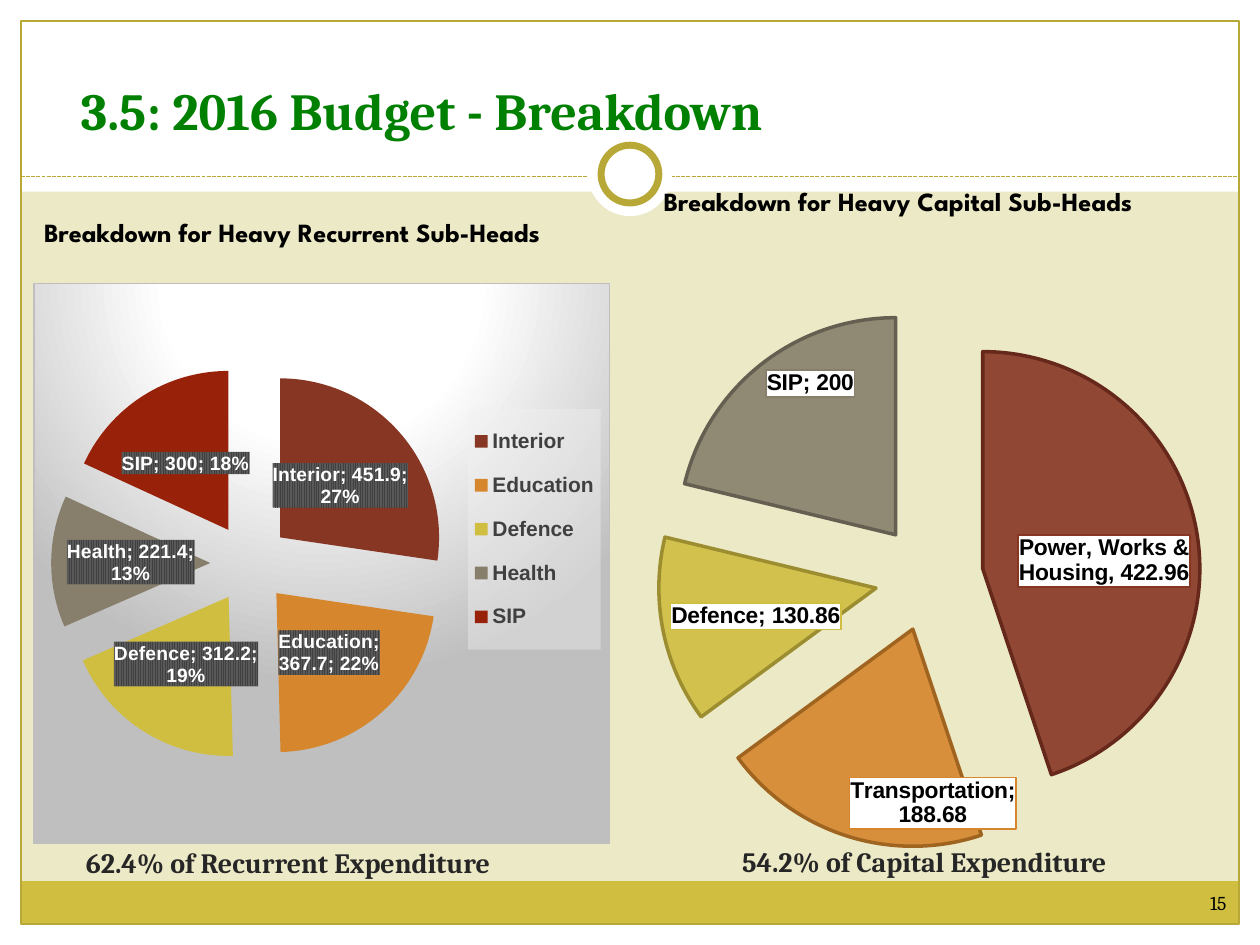
from lxml import etree
from pptx import Presentation
from pptx.chart.data import CategoryChartData
from pptx.dml.color import RGBColor
from pptx.enum.chart import XL_CHART_TYPE, XL_LABEL_POSITION, XL_LEGEND_POSITION
from pptx.enum.dml import MSO_LINE
from pptx.enum.shapes import MSO_CONNECTOR, MSO_SHAPE
from pptx.enum.text import MSO_ANCHOR, MSO_AUTO_SIZE, PP_ALIGN
from pptx.oxml import parse_xml
from pptx.oxml.ns import qn
from pptx.util import Pt

WHITE = RGBColor(0xFF, 0xFF, 0xFF)
BLACK = RGBColor(0, 0, 0)
CREAM = RGBColor(0xEC, 0xE9, 0xC6)
GOLD = RGBColor(0xB8, 0xA8, 0x38)
GREEN = RGBColor(0, 0x80, 0)
CHARCOAL = RGBColor(0x26, 0x26, 0x26)
GREY = RGBColor(0x40, 0x40, 0x40)
BROWN = RGBColor(0x87, 0x36, 0x24)
ORANGE = RGBColor(0xD6, 0x86, 0x2D)
YELLOW = RGBColor(0xD0, 0xBE, 0x40)
TAUPE = RGBColor(0x87, 0x7F, 0x6C)
RED = RGBColor(0x97, 0x21, 0x09)

RECURRENT = [("Interior", 451.9, BROWN), ("Education", 367.7, ORANGE),
             ("Defence", 312.2, YELLOW), ("Health", 221.4, TAUPE), ("SIP", 300, RED)]
CAPITAL = [("Power, Works & Housing", 422.96, BROWN), ("Transportation", 188.68, ORANGE),
           ("Defence", 130.86, YELLOW), ("SIP", 200, TAUPE)]


def solid(color, alpha=100):
    return f'<a:solidFill><a:srgbClr val="{color}"><a:alpha val="{alpha * 1000}"/></a:srgbClr></a:solidFill>'


def chart_properties(content):
    return parse_xml('<c:spPr xmlns:c="http://schemas.openxmlformats.org/drawingml/2006/chart" '
                     'xmlns:a="http://schemas.openxmlformats.org/drawingml/2006/main">'
                     f'{content}</c:spPr>')


def add_panel(slide, kind, box, fill=None, line=None, width=0.75):
    shape = slide.shapes.add_shape(kind, *map(Pt, box))
    shape.shadow.inherit = False
    if fill is None:
        shape.fill.background()
    else:
        shape.fill.solid()
        shape.fill.fore_color.rgb = fill
    if line is None:
        shape.line.fill.background()
    else:
        shape.line.color.rgb = line
        shape.line.width = Pt(width)


def add_divider(slide, left, right, top):
    line = slide.shapes.add_connector(MSO_CONNECTOR.STRAIGHT, Pt(left), Pt(top), Pt(right), Pt(top))
    line.line.color.rgb = GOLD
    line.line.width = Pt(0.75)
    line.line.dash_style = MSO_LINE.SQUARE_DOT
    etree.SubElement(line._element.spPr, qn("a:effectLst"))


def write_text(shape, box, text, font_name, size, color, bold=True,
               anchor=MSO_ANCHOR.TOP, before=0, spacing=1.0, align=PP_ALIGN.LEFT):
    shape.left, shape.top, shape.width, shape.height = map(Pt, box)
    frame = shape.text_frame
    frame.text = text
    frame.word_wrap = True
    frame.auto_size = MSO_AUTO_SIZE.NONE
    frame.vertical_anchor = anchor
    paragraph = frame.paragraphs[0]
    paragraph.alignment = align
    paragraph.space_before = Pt(before)
    paragraph.line_spacing = spacing
    style_font(paragraph.runs[0].font, font_name, size, color, bold)


def fill_placeholder(slide, placeholder, *args, **options):
    write_text(placeholder, *args, **options)
    # Bring the text in front of the frame
    slide.shapes._spTree.append(placeholder._element)


def add_text(slide, box, *args, **options):
    write_text(slide.shapes.add_textbox(*map(Pt, box)), box, *args, **options)


def style_font(font, name, size, color, bold=True):
    font.name, font.size, font.bold = name, Pt(size), bold
    font.color.rgb = color


def add_pie(slide, box, rows, position, label_size, label_color, percent):
    data = CategoryChartData()
    data.categories = [name for name, _, _ in rows]
    data.add_series("Series 1", [value for _, value, _ in rows])
    chart = slide.shapes.add_chart(XL_CHART_TYPE.PIE, *map(Pt, box), data).chart
    chart.has_title = False
    chart.has_legend = False
    style_font(chart.font, "Cambria", 10, BLACK, False)
    plot = chart.plots[0]
    plot.vary_by_categories = True
    series = plot.series[0]
    for index, (_, _, color) in enumerate(rows):
        fill = series.points[index].format.fill
        fill.solid()
        fill.fore_color.rgb = color
    # Pull all slices apart
    explosion = etree.Element(qn("c:explosion"), val="25")
    series._element.find(qn("c:dPt")).addprevious(explosion)
    labels = series.data_labels
    labels.show_value = labels.show_category_name = True
    labels.show_percentage = percent
    labels.position = position
    style_font(labels.font, "Arial", label_size, label_color)
    add_separator(labels._element)
    return chart


def add_separator(element):
    separator = etree.Element(qn("c:separator"))
    separator.text = "; "
    element.find(qn("c:showBubbleSize")).addnext(separator)


def style_recurrent(chart):
    # Dark striped labels
    labels = chart.plots[0].series[0].data_labels._element
    labels.find(qn("c:txPr")).addprevious(chart_properties(
        '<a:pattFill prst="narVert"><a:fgClr><a:srgbClr val="404040"/></a:fgClr>'
        '<a:bgClr><a:srgbClr val="595959"/></a:bgClr></a:pattFill>'))
    # Radial background
    stops = "".join(f'<a:gs pos="{place * 1000}"><a:srgbClr val="{color}"/></a:gs>'
                    for place, color in [(0, "FFFFFF"), (39, "FFFFFF"), (100, "BFBFBF")])
    chart._chartSpace.find(qn("c:txPr")).addprevious(chart_properties(
        f'<a:gradFill><a:gsLst>{stops}</a:gsLst><a:path path="circle">'
        '<a:fillToRect l="50000" t="-80000" r="50000" b="180000"/></a:path></a:gradFill>'
        f'<a:ln w="9525">{solid("BFBFBF")}</a:ln>'))
    # Translucent legend
    chart.has_legend = True
    legend = chart.legend
    legend.position = XL_LEGEND_POSITION.RIGHT
    legend.include_in_layout = False
    style_font(legend.font, "Arial", 12, GREY)
    element = legend._element
    element.find(qn("c:txPr")).addprevious(chart_properties(solid("F2F2F2", 39)))
    layout = element.find(qn("c:layout"))
    if layout is None:
        layout = etree.Element(qn("c:layout"))
        element.find(qn("c:legendPos")).addnext(layout)
    manual = etree.SubElement(layout, qn("c:manualLayout"))
    for tag, value in [("xMode", "edge"), ("yMode", "edge"), ("x", "0.755"),
                       ("y", "0.224"), ("w", "0.23"), ("h", "0.43")]:
        etree.SubElement(manual, qn(f"c:{tag}"), val=value)


def style_capital(chart, rows):
    series = chart.plots[0].series[0]
    for index, (name, value, color) in enumerate(rows):
        # Translucent slice with a darker edge
        point = series.points[index]
        shade = RGBColor(*(int(part * 0.75) for part in color))
        point.format.line.color.rgb = shade
        point.format.line.width = Pt(2)
        rgb = point.format.fill._xPr.find(qn("a:solidFill"))[0]
        etree.SubElement(rgb, qn("a:alpha"), val="90000")
        # White label edged in the slice colour
        label = point.data_label
        if index == 0:
            frame = label.text_frame
            frame.text = f"{name}, {value}"
            style_font(frame.paragraphs[0].runs[0].font, "Arial", 13, BLACK)
        else:
            style_font(label.font, "Arial", 13, BLACK)
        label.position = XL_LABEL_POSITION.INSIDE_END
        element = label._dLbl
        element.find(qn("c:showCatName")).set("val", "1")
        add_separator(element)
        follower = element.find(qn("c:txPr"))
        if follower is None:
            follower = element.find(qn("c:dLblPos"))
        follower.addprevious(chart_properties(
            solid(WHITE) + f'<a:ln w="12700">{solid(color)}</a:ln>'))


def main():
    presentation = Presentation()
    presentation.slide_width, presentation.slide_height = Pt(720), Pt(540)
    slide = presentation.slides.add_slide(presentation.slide_layouts[4])
    slide.background.fill.solid()
    slide.background.fill.fore_color.rgb = CREAM
    title, left_heading, left_body, right_heading, right_body = slide.placeholders
    for unused in (left_body, right_body):
        unused._element.getparent().remove(unused._element)

    # Frame, footer band and ring
    for box in [(0, 528, 720, 12), (0, 0, 720, 109.5), (0, 0, 12, 540), (708, 0, 12, 540)]:
        add_panel(slide, MSO_SHAPE.RECTANGLE, box, WHITE)
    add_panel(slide, MSO_SHAPE.RECTANGLE, (12, 503.5, 696, 24.5), YELLOW)
    add_panel(slide, MSO_SHAPE.RECTANGLE, (12, 12, 696, 516), line=GOLD)
    add_divider(slide, 12, 708, 100.8)
    add_panel(slide, MSO_SHAPE.OVAL, (336, 75.5, 48, 48), WHITE)
    add_panel(slide, MSO_SHAPE.OVAL, (343.5, 83, 33, 33), WHITE, GOLD, 4)

    # Title and page number
    fill_placeholder(slide, title, (39, 39.5, 636.5, 44.5), "3.5: 2016 Budget - Breakdown",
                     "Cambria", 29.7, GREEN, anchor=MSO_ANCHOR.BOTTOM)
    add_text(slide, (682.5, 505.5, 25.5, 23), "15", "Cambria", 11.2, BLACK,
             bold=False, align=PP_ALIGN.RIGHT)

    # Recurrent side
    fill_placeholder(slide, left_heading, (18, 120, 330.5, 57),
                     "Breakdown for Heavy Recurrent Sub-Heads", "League Spartan", 15, BLACK, before=3)
    style_recurrent(add_pie(slide, (19, 161.5, 329.5, 321), RECURRENT,
                            XL_LABEL_POSITION.CENTER, 11, WHITE, True))

    # Capital side
    fill_placeholder(slide, right_heading, (372, 102, 330, 57),
                     "Breakdown for Heavy Capital Sub-Heads", "League Spartan", 15, BLACK, before=3)
    style_capital(add_pie(slide, (360, 165, 342, 330), CAPITAL,
                          XL_LABEL_POSITION.INSIDE_END, 13, BLACK, False), CAPITAL)

    # Captions
    for box, text in [((42, 480, 342, 29), "62.4% of Recurrent Expenditure"),
                      ((417, 465, 285, 57), "54.2% of Capital Expenditure")]:
        add_text(slide, box, text, "Cambria", 16, CHARCOAL,
                 anchor=MSO_ANCHOR.MIDDLE, before=13, spacing=0.85)

    presentation.save("out.pptx")


if __name__ == "__main__":
    main()
